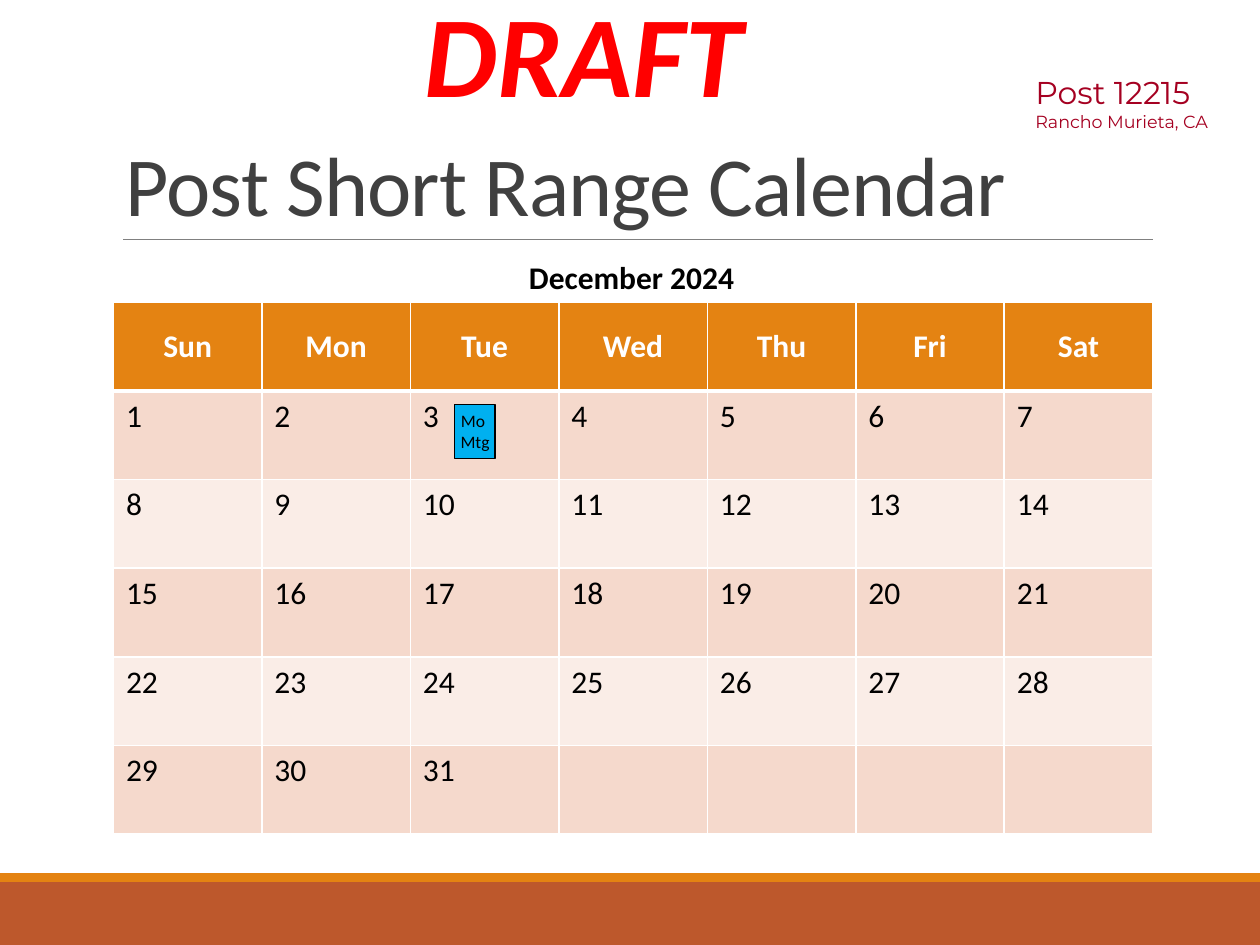
from dataclasses import dataclass

from lxml import etree
from pptx import Presentation
from pptx.dml.color import RGBColor
from pptx.enum.shapes import MSO_CONNECTOR, MSO_SHAPE
from pptx.enum.text import MSO_ANCHOR, MSO_AUTO_SIZE, PP_ALIGN
from pptx.oxml import parse_xml
from pptx.oxml.ns import nsdecls, qn
from pptx.util import Inches, Pt

RECTANGLE, STRAIGHT = MSO_SHAPE.RECTANGLE, MSO_CONNECTOR.STRAIGHT
LEFT, CENTER = PP_ALIGN.LEFT, PP_ALIGN.CENTER
TOP, MIDDLE, BOTTOM = MSO_ANCHOR.TOP, MSO_ANCHOR.MIDDLE, MSO_ANCHOR.BOTTOM
FIT_SHAPE = MSO_AUTO_SIZE.SHAPE_TO_FIT_TEXT


@dataclass(frozen=True)
class Theme:
    body: str = "Calibri"
    accent_font: str = "Montserrat"
    orange: str = "E48312"
    rust: str = "BD582C"
    odd_week: str = "F5D9CC"
    even_week: str = "FAEDE7"
    event: str = "00B0F0"
    red: str = "FF0000"
    crimson: str = "A50021"
    title: str = "404040"
    rule: str = "808080"
    black: str = "000000"
    white: str = "FFFFFF"
    draft_size: int = 66
    title_size: int = 48
    text_size: int = 18
    small_size: int = 10


theme = Theme()
deck = Presentation()
deck.slide_width, deck.slide_height = Inches(10), Inches(7.5)
page = deck.slides.add_slide(deck.slide_layouts[6])


def place(left, top, width, height):
    """Turn percentages of the slide's width and height into lengths."""
    across, down = deck.slide_width / 100, deck.slide_height / 100
    return [round(n) for n in (left * across, top * down, width * across, height * down)]


def write(para, text, size, color, font=theme.body, bold=False, align=LEFT):
    para.alignment = align
    span = para.add_run()
    span.text = text
    span.font.name, span.font.size, span.font.bold = font, Pt(size), bold
    span.font.color.rgb = RGBColor.from_string(color)
    return span


# Footer bands
for spot, color in (((0, 93.33, 100, 6.67), theme.rust), ((0, 92.4, 100, 0.93), theme.orange)):
    band = page.shapes.add_shape(RECTANGLE, *place(*spot))
    band.shadow.inherit = False
    band.fill.solid()
    band.fill.fore_color.rgb = RGBColor.from_string(color)
    band.line.fill.background()

# Rule under the title
start_x, rule_y, length, _ = place(9.8, 25.33, 81.7, 0)
rule = page.shapes.add_connector(STRAIGHT, start_x, rule_y, start_x + length, rule_y)
rule.line.color.rgb = RGBColor.from_string(theme.rule)
rule.line.width = Pt(0.5)
etree.SubElement(rule.element.spPr, qn("a:effectLst"))

# Post name and town
post = page.shapes.add_textbox(*place(81.2, 7.07, 17.4, 7.6)).text_frame
post.word_wrap, post.auto_size = False, FIT_SHAPE
write(post.paragraphs[0], "Post 12215", theme.text_size, theme.crimson, theme.accent_font)
write(post.add_paragraph(), "Rancho Murieta, CA", theme.small_size, theme.crimson, theme.accent_font)

# Draft mark
draft = page.shapes.add_textbox(*place(32.6, -2.53, 27.5, 16.13)).text_frame
draft.word_wrap, draft.auto_size = False, FIT_SHAPE
span = write(draft.paragraphs[0], "DRAFT", theme.draft_size, theme.red, bold=True, align=CENTER)
span.font.italic = True
span.font.fill  # the outline goes ahead of the fill
span.font._element.insert(0, parse_xml(
    f'<a:ln {nsdecls("a")} w="{Pt(0.52)}"><a:solidFill><a:srgbClr val="{theme.rust}"/></a:solidFill></a:ln>'))

# Title
title = page.shapes.add_textbox(*place(9, 4.13, 82.5, 21.2)).text_frame
title.word_wrap, title.vertical_anchor = True, BOTTOM
title.paragraphs[0].line_spacing = 0.85
span = write(title.paragraphs[0], "Post Short Range Calendar", theme.title_size, theme.title)
span.font._element.set("spc", "-50")

# Calendar: a heading row, then the days of the month by week
days = ["Sun", "Mon", "Tue", "Wed", "Thu", "Fri", "Sat"]
month_length, weeks = 31, 5
calendar = page.shapes.add_table(weeks + 1, len(days), *place(9, 32, 82.5, 56.27)).table
for row in range(weeks + 1):
    heading = row == 0
    fill = theme.orange if heading else theme.odd_week if row % 2 else theme.even_week
    for column, day in enumerate(days):
        cell = calendar.cell(row, column)
        cell.fill.solid()
        cell.fill.fore_color.rgb = RGBColor.from_string(fill)
        cell.vertical_anchor = MIDDLE if heading else TOP
        date = (row - 1) * len(days) + column + 1
        if heading:
            write(cell.text_frame.paragraphs[0], day, theme.text_size, theme.white, bold=True, align=CENTER)
        elif date <= month_length:
            write(cell.text_frame.paragraphs[0], str(date), theme.text_size, theme.black)
        for order, side in enumerate("LRTB"):
            thick = (heading and side == "B") or (row == 1 and side == "T")
            cell._tc.get_or_add_tcPr().insert(order, parse_xml(
                f'<a:ln{side} {nsdecls("a")} w="{Pt(3 if thick else 1)}"><a:solidFill>'
                f'<a:srgbClr val="{theme.white}"/></a:solidFill></a:ln{side}>'))

# Month
month = page.shapes.add_textbox(*place(41, 26.67, 18.4, 5.33)).text_frame
month.word_wrap, month.auto_size = False, FIT_SHAPE
write(month.paragraphs[0], "December 2024", theme.text_size, theme.black, bold=True)

# Monthly meeting on the 3rd
meeting = page.shapes.add_shape(RECTANGLE, *place(36.1, 42.8, 3.2, 5.73))
meeting.shadow.inherit = False
meeting.fill.solid()
meeting.fill.fore_color.rgb = RGBColor.from_string(theme.event)
meeting.line.color.rgb = RGBColor.from_string(theme.black)
meeting.line.width = Pt(0.75)
label = meeting.text_frame
label.word_wrap, label.vertical_anchor = False, MIDDLE
write(label.paragraphs[0], "Mo ", theme.small_size, theme.black, align=CENTER)
write(label.add_paragraph(), "Mtg", theme.small_size, theme.black, align=CENTER)

deck.save("out.pptx")
